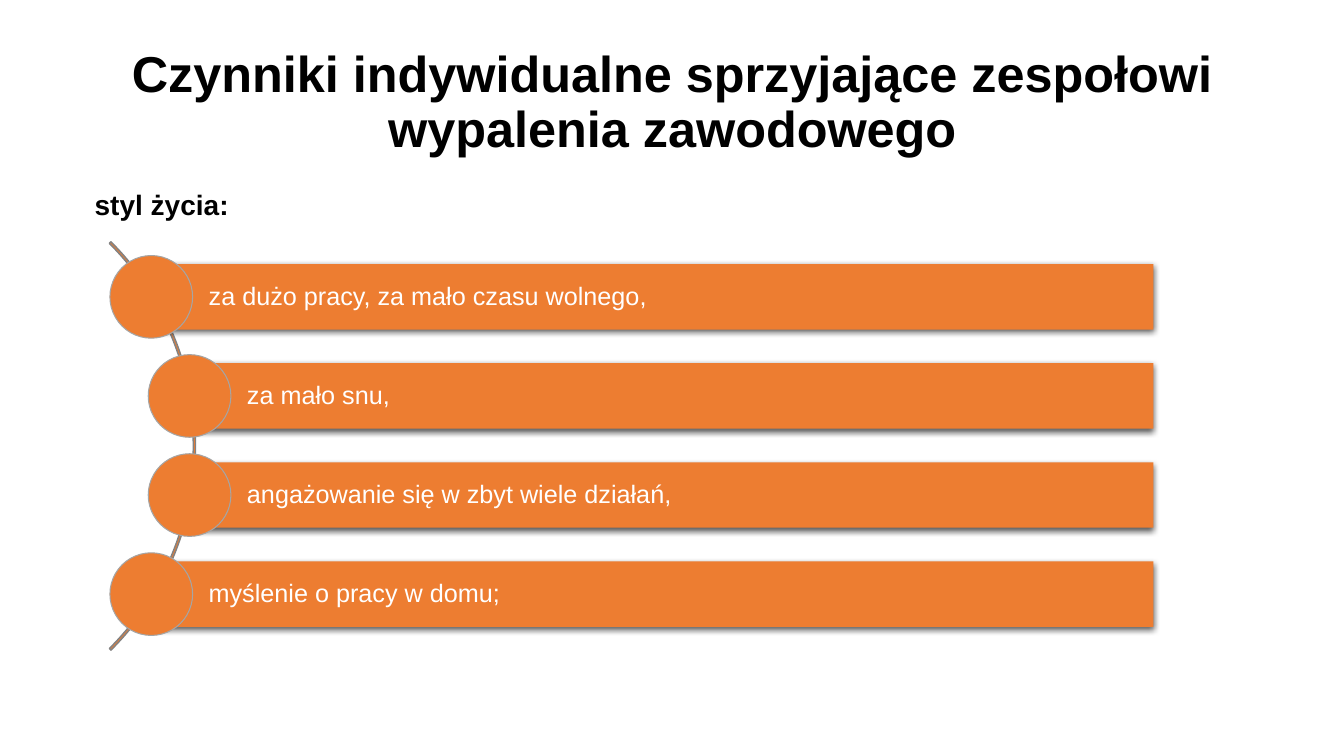
from lxml import etree
from pptx import Presentation
from pptx import util as u
from pptx.dml.color import RGBColor
from pptx.enum import shapes, text
from pptx.oxml.ns import qn

HUES = {"bar": "ED7D31", "arc": "828282", "ring": "A5A5A5",
        "ink": "000000", "pale": "FFFFFF"}
ITEMS = ["za dużo pracy, za mało czasu wolnego,", "za mało snu,",
         "angażowanie się w zbyt wiele działań,", "myślenie o pracy w domu;"]
LEFTS = [1.5, 1.88, 1.88, 1.5]
RIGHT, TOP, STEP, HIGH, DOT = 11.44, 2.62, 0.983, 0.65, 0.82


def write(shape, words, size, hue="ink", bold=False, align=text.PP_ALIGN.LEFT,
          anchor=text.MSO_ANCHOR.MIDDLE, inset=(0.1, 0.05, 0.1, 0.05), space=0.9):
    frame = shape.text_frame
    frame.word_wrap = True
    frame.auto_size = text.MSO_AUTO_SIZE.NONE
    frame.vertical_anchor = anchor
    (frame.margin_left, frame.margin_top,
     frame.margin_right, frame.margin_bottom) = map(u.Inches, inset)
    para = frame.paragraphs[0]
    para.alignment, para.line_spacing = align, space
    run = para.add_run()
    run.text = words
    run.font.name, run.font.size, run.font.bold = "Arial", u.Pt(size), bold
    run.font.color.rgb = RGBColor.from_string(HUES[hue])


def draw(kind, box, line=None, width=1):
    """Add an orange preset shape without shadow."""
    shape = slide.shapes.add_shape(kind, *map(u.Inches, box))
    shape.shadow.inherit = False
    shape.fill.solid()
    shape.fill.fore_color.rgb = RGBColor.from_string(HUES["bar"])
    if line:
        shape.line.color.rgb = RGBColor.from_string(HUES[line])
        shape.line.width = u.Pt(width)
    else:
        shape.line.fill.background()
    return shape


deck = Presentation()
deck.slide_width, deck.slide_height = u.Inches(13.33), u.Inches(7.5)
slide = deck.slides.add_slide(deck.slide_layouts[5])

title = slide.shapes.title
title.left, title.top = u.Inches(0.92), u.Inches(0.35)
title.width, title.height = u.Inches(11.5), u.Inches(1.36)
write(title, "Czynniki indywidualne sprzyjające zespołowi wypalenia zawodowego",
      36, bold=True, align=text.PP_ALIGN.CENTER)

label = slide.shapes.add_textbox(*map(u.Inches, (0.84, 1.81, 10.09, 0.57)))
write(label, "styl życia:", 20, bold=True, anchor=text.MSO_ANCHOR.TOP, space=1.0)

arc = draw(shapes.MSO_SHAPE.BLOCK_ARC, (-3.79, 1.56, 5.73, 5.73), "arc")
for place, value in enumerate((189, 27, 0.004)):
    arc.adjustments[place] = value

for row, (left, item) in enumerate(zip(LEFTS, ITEMS)):
    top = TOP + row * STEP
    bar = draw(shapes.MSO_SHAPE.RECTANGLE, (left, top, RIGHT - left, HIGH))
    glow = etree.SubElement(bar._element.spPr.find(qn("a:effectLst")), qn("a:outerShdw"),
                            blurRad=str(u.Pt(4.5)), dist=str(u.Pt(1.5)),
                            dir="5400000", algn="ctr", rotWithShape="0")
    tint = etree.SubElement(glow, qn("a:srgbClr"), val=HUES["ink"])
    etree.SubElement(tint, qn("a:alpha"), val="63000")
    write(bar, item, 18, "pale", inset=(0.57, 0.09, 0.09, 0.09))
    draw(shapes.MSO_SHAPE.OVAL,
         (left - DOT / 2, top + (HIGH - DOT) / 2, DOT, DOT), "ring", 0.75)

deck.save("out.pptx")
